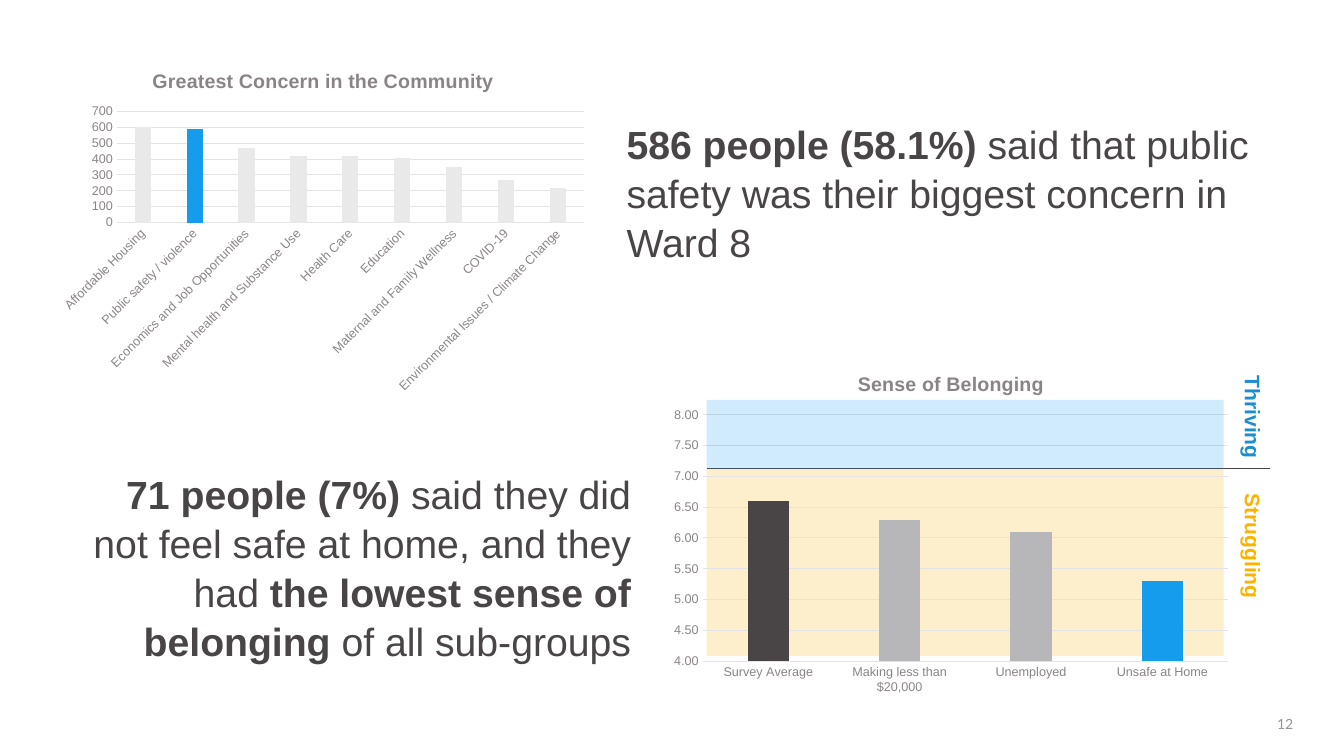
from lxml import etree
from pptx import Presentation
from pptx import util as u
from pptx.chart.data import CategoryChartData
from pptx.dml.color import RGBColor
from pptx.enum import chart as charts, shapes, text
from pptx.oxml import parse_xml
from pptx.oxml.ns import nsdecls, qn

DARK, MUTED, GRID = "494546", "8B8486", "E4E3E3"
BLUE, AMBER, PALE, GREY = "169CEC", "FCB300", "E9E9E9", "B7B6B8"


def paint(color, value):
    """Set a fill's or font's colour from a hex string."""
    color.rgb = RGBColor.from_string(value)


def cm(*lengths):
    return [u.Cm(length) for length in lengths]


def style_font(font, size, color, bold=False, name="Arial"):
    font.size, font.bold, font.name = u.Pt(size), bold, name
    paint(font.color, color)


def add_band(page, area, color):
    """Translucent rectangle marking a score range."""
    band = page.shapes.add_shape(shapes.MSO_SHAPE.RECTANGLE, *cm(*area))
    band.shadow.inherit = False
    band.fill.solid()
    paint(band.fill.fore_color, color)
    tint = next(band.element.spPr.iter(qn("a:srgbClr")))
    etree.SubElement(tint, qn("a:alpha")).set("val", "20000")
    band.line.fill.background()


def add_text(page, area, spans, size, align=text.PP_ALIGN.LEFT, name="Arial", spacing=None):
    """Text box with one paragraph; spans are (words, colour, bold)."""
    box = page.shapes.add_textbox(*cm(*area))
    box.text_frame.word_wrap = True
    para = box.text_frame.paragraphs[0]
    para.alignment = align
    para.line_spacing = spacing
    for words, color, bold in spans:
        span = para.add_run()
        span.text = words
        style_font(span.font, size, color, bold, name)
    return box


def add_range_labels(page, area, spans, tab):
    """Labels running down the page, parted by a tab stop."""
    box = add_text(page, area, spans, 15)
    box.text_frame._txBody.bodyPr.set("vert", "vert")
    properties = box.text_frame.paragraphs[0]._p.get_or_add_pPr()
    stops = etree.SubElement(properties, qn("a:tabLst"))
    etree.SubElement(stops, qn("a:tab"), pos=str(u.Cm(tab)), algn="l")


def add_threshold(page, left, right, top):
    line = page.shapes.add_connector(
        shapes.MSO_CONNECTOR.STRAIGHT, *cm(right, top, left, top))
    line.line.width = u.Pt(1)
    paint(line.line.color, DARK)
    etree.SubElement(line.element.spPr, qn("a:effectLst"))


def place_plot(chart, plot_box):
    """Fix the inner plot area, as fractions of the chart."""
    sizes = "".join(f'<c:{key} val="{value}"/>' for key, value in zip("xywh", plot_box))
    area = chart.element.chart.plotArea
    for layout in area.findall(qn("c:layout")):
        area.remove(layout)
    area.insert(0, parse_xml(
        f'<c:layout {nsdecls("c")}><c:manualLayout><c:layoutTarget val="inner"/>'
        f'<c:xMode val="edge"/><c:yMode val="edge"/>{sizes}'
        '</c:manualLayout></c:layout>'))


def style_axis(axis):
    axis.major_tick_mark = axis.minor_tick_mark = charts.XL_TICK_MARK.NONE
    style_font(axis.tick_labels.font, 9, MUTED)


def style_line(line):
    line.width = u.Pt(0.75)
    paint(line.color, GRID)


def add_columns(page, area, title, bars, scale, number_format, plot_box, slant=0):
    """Column chart; bars are (category, value, colour)."""
    data = CategoryChartData()
    data.categories = [name for name, value, color in bars]
    data.add_series("Series 1", [value for name, value, color in bars])
    chart = page.shapes.add_chart(
        charts.XL_CHART_TYPE.COLUMN_CLUSTERED, *cm(*area), data).chart
    style_font(chart.font, 10, DARK)
    chart.element.find(qn("c:txPr")).addprevious(parse_xml(
        f'<c:spPr {nsdecls("c", "a")}><a:noFill/><a:ln><a:noFill/></a:ln></c:spPr>'))
    place_plot(chart, plot_box)
    chart.has_legend = False

    heading = chart.chart_title.text_frame.paragraphs[0].add_run()
    heading.text = title
    style_font(heading.font, 14, MUTED, True)
    chart.chart_title.include_in_layout = False

    # Axes
    categories, values = chart.category_axis, chart.value_axis
    style_axis(categories)
    style_axis(values)
    style_line(categories.format.line)
    values.format.line.fill.background()
    style_line(values.major_gridlines.format.line)
    values.minimum_scale, values.maximum_scale, values.major_unit = scale
    values.tick_labels.number_format = number_format
    values.tick_labels.number_format_is_linked = False
    if slant:
        body = categories._element.find(qn("c:txPr")).find(qn("a:bodyPr"))
        body.set("rot", str(slant * 60000))
        body.set("vert", "horz")

    # Columns
    plot = chart.plots[0]
    plot.gap_width, plot.overlap, plot.vary_by_categories = 219, -27, False
    series = plot.series[0]
    series.format.fill.solid()
    paint(series.format.fill.fore_color, BLUE)
    for index, (name, value, color) in enumerate(bars):
        if color != BLUE:
            fill = series.points[index].format.fill
            fill.solid()
            paint(fill.fore_color, color)


def main():
    deck = Presentation()
    deck.slide_width, deck.slide_height = cm(33.87, 19.05)
    page = deck.slides.add_slide(deck.slide_layouts[6])
    right = text.PP_ALIGN.RIGHT
    band_left, band_width, threshold = 17.81, 13.03, 11.81

    add_band(page, (band_left, threshold, band_width, 4.72), AMBER)

    # Page number
    number = add_text(page, (24.97, 17.96, 7.62, 0.58), [("12", "959494", False)],
                      10, right, "Lato")
    frame = number.text_frame
    frame.margin_left = frame.margin_right = frame.margin_top = frame.margin_bottom = 0
    frame.vertical_anchor = text.MSO_ANCHOR.MIDDLE

    # Community concerns
    concerns = [
        ("Affordable Housing", 600, PALE),
        ("Public safety / violence", 590, BLUE),
        ("Economics and Job Opportunities", 470, PALE),
        ("Mental health and Substance Use", 420, PALE),
        ("Health Care", 420, PALE),
        ("Education", 410, PALE),
        ("Maternal and Family Wellness", 350, PALE),
        ("COVID-19", 270, PALE),
        ("Environmental Issues / Climate Change", 220, PALE),
    ]
    add_columns(page, (1.3, 1.32, 13.69, 8.76), "Greatest Concern in the Community",
                concerns, (0, 700, 100), "0", (0.12, 0.17, 0.86, 0.32), slant=-45)
    add_text(page, (15.54, 2.87, 16.51, 3.84), [
        ("586 people (58.1%) ", DARK, True),
        ("said that public safety was their biggest concern in Ward 8", DARK, False),
    ], 28, spacing=1.04)

    # Sense of belonging
    add_text(page, (1.57, 11.68, 14.58, 5.05), [
        ("71 people (7%) ", DARK, True),
        ("said they did not feel safe at home, and they had ", DARK, False),
        ("the lowest sense of belonging ", DARK, True),
        ("of all sub-groups", DARK, False),
    ], 28, right, spacing=1.04)
    belonging = [
        ("Survey Average", 6.6, DARK),
        ("Making less than $20,000", 6.3, GREY),
        ("Unemployed", 6.1, GREY),
        ("Unsafe at Home", 5.3, BLUE),
    ]
    add_columns(page, (16.69, 8.97, 14.55, 8.74), "Sense of Belonging",
                belonging, (4, 8, 0.5), "0.00", (0.07, 0.17, 0.91, 0.71))

    # Thriving and struggling ranges
    add_range_labels(page, (30.89, 9.22, 1.14, 6.83), [
        ("Thriving\t", "1A8ECE", True), ("Struggling", AMBER, True)], tab=2.97)
    add_threshold(page, band_left, 32, threshold)
    add_band(page, (band_left, 10.08, band_width, threshold - 10.08), BLUE)

    deck.save("out.pptx")


if __name__ == "__main__":
    main()
